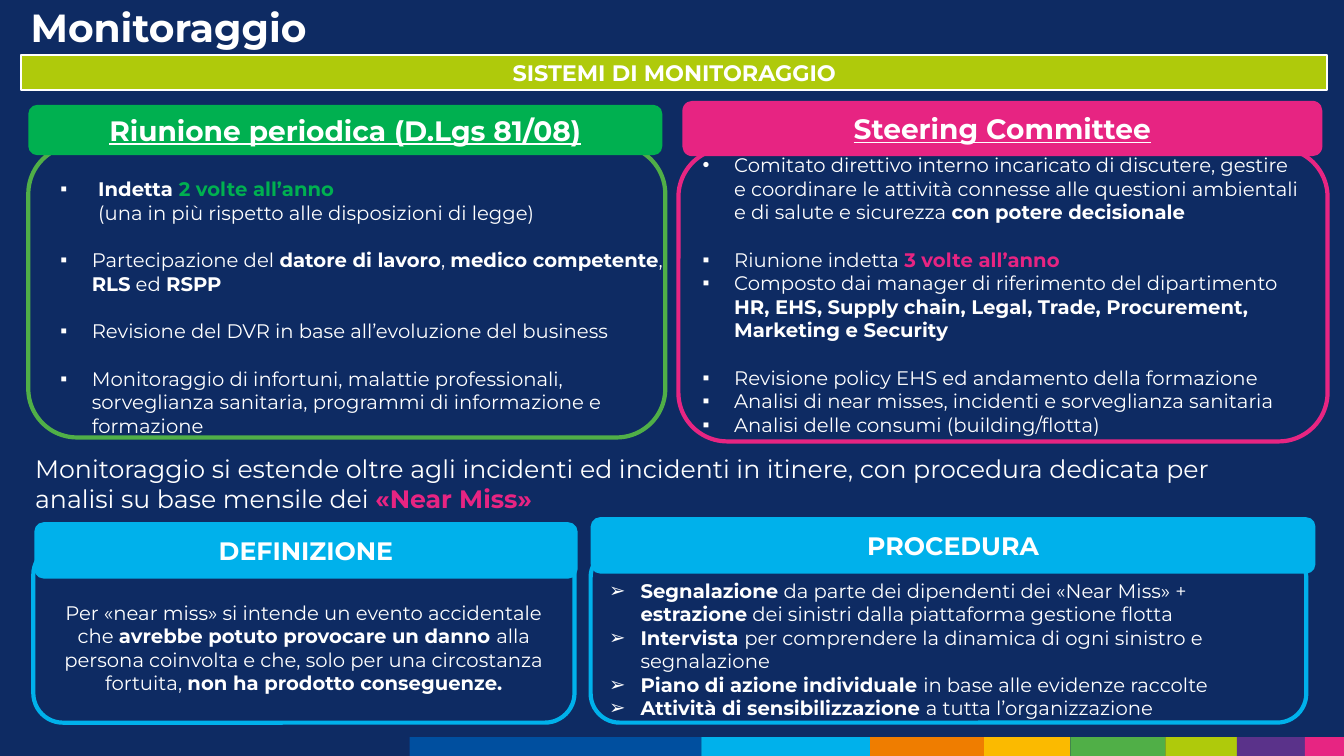
from lxml import etree
from pptx import Presentation
from pptx.dml.color import RGBColor
from pptx.enum.shapes import MSO_SHAPE
from pptx.enum.text import MSO_ANCHOR, PP_ALIGN
from pptx.oxml.ns import qn
from pptx.util import Pt

RECT = MSO_SHAPE.RECTANGLE
ROUNDED = MSO_SHAPE.ROUNDED_RECTANGLE
PROCESS = MSO_SHAPE.FLOWCHART_ALTERNATE_PROCESS
LEFT, CENTER = PP_ALIGN.LEFT, PP_ALIGN.CENTER
TOP, MIDDLE = MSO_ANCHOR.TOP, MSO_ANCHOR.MIDDLE

FONT = "Montserrat"
COLORS = {
    "navy": "0E2B63", "white": "FFFFFF", "lime": "AFCA0B", "green": "00B050",
    "leaf": "50AF47", "pink": "E72482", "magenta": "E72582", "cyan": "00B1EB",
    "blue": "004F9F", "orange": "EF7D00", "yellow": "FBBA00", "purple": "5A328A",
}
LINE_GAP = 17  # one line of body text
INDENT = 22.5

deck = Presentation()
deck.slide_width, deck.slide_height = Pt(960), Pt(540)
page = deck.slides.add_slide(deck.slide_layouts[6])
page.background.fill.solid()
page.background.fill.fore_color.rgb = RGBColor.from_string(COLORS["navy"])


def add_box(kind, place, fill=None, line=None, line_width=3):
    """Add a preset shape, or a text box when kind is None."""
    place = [Pt(value) for value in place]
    if kind is None:
        box = page.shapes.add_textbox(*place)
    else:
        box = page.shapes.add_shape(kind, *place)
        box.shadow.inherit = False
        for part, color in ((box.fill, fill), (box.line.fill, line)):
            if color:
                part.solid()
                part.fore_color.rgb = RGBColor.from_string(COLORS[color])
            else:
                part.background()
        if line:
            box.line.width = Pt(line_width)
    box.text_frame.word_wrap = True
    return box


def write(box, paragraphs, size=14, align=LEFT, anchor=MIDDLE, top=0):
    """Each paragraph is (bullet, indent, space before, spans).

    A span is (text, style): None is plain, "bold" is white, a colour is bold.
    """
    frame = box.text_frame
    frame.vertical_anchor = anchor
    frame.margin_top, frame.margin_bottom = Pt(top), 0
    for index, (bullet, indent, gap, spans) in enumerate(paragraphs):
        para = frame.paragraphs[0] if index == 0 else frame.add_paragraph()
        para.alignment = align
        if gap:
            para.space_before = Pt(gap)
        if bullet:
            props = para._p.get_or_add_pPr()
            props.set("marL", str(Pt(indent)))
            props.set("indent", str(-Pt(indent)))
            etree.SubElement(props, qn("a:buFont")).set("typeface", "Arial")
            etree.SubElement(props, qn("a:buChar")).set("char", bullet)
        para.font.name, para.font.size = FONT, Pt(size)
        for text, style in spans:
            if text == "\n":
                para.add_line_break()
                continue
            span = para.add_run()
            span.text = text
            span.font.bold = style is not None
            color = COLORS.get(style, COLORS["white"])
            span.font.color.rgb = RGBColor.from_string(color)


# Footer stripe: each band runs to the start of the next
edges = [292.5, 501, 621.5, 703, 764.5, 832.5, 883.5, 932, 960]
bands = ["blue", "cyan", "orange", "yellow", "leaf", "lime", "purple", "magenta"]
for start, end, color in zip(edges, edges[1:], bands):
    add_box(RECT, (start, 526.5, end - start, 13.5), color)

# Title
title = add_box(None, (14.4, 6.5, 687.6, 38.9))
title.text_frame.margin_left = Pt(7.5)
write(title, [(None, 0, 0, [("Monitoraggio", "bold")])], 28, anchor=TOP)
title.text_frame.paragraphs[0].line_spacing = 0.9

# Outlined cards
meeting_card = add_box(ROUNDED, (20.2, 103.7, 455, 208.8), line="leaf")
committee_card = add_box(ROUNDED, (484.6, 105.8, 463.7, 209.5), line="magenta")
definition_card = add_box(ROUNDED, (23.8, 389.5, 386.6, 126.7), line="cyan")
procedure_card = add_box(ROUNDED, (421.9, 391.7, 511.2, 124.5), line="cyan")

# Headings over the cards
headings = [
    ("SISTEMI DI MONITORAGGIO", RECT, (15.1, 39.6, 933.1, 24.5), "lime", 16),
    ("Riunione periodica (D.Lgs 81/08)", ROUNDED, (20.2, 74.9, 452.9, 36), "green", 20),
    ("Steering Committee", ROUNDED, (487.4, 72, 457.2, 39.6), "pink", 20),
    ("DEFINIZIONE", PROCESS, (24.5, 373, 388.1, 40.3), "cyan", 18),
    ("PROCEDURA", PROCESS, (421.9, 369.4, 517.7, 40.3), "cyan", 18),
]
for text, kind, place, color, size in headings:
    line = "white" if kind == RECT else None
    heading = add_box(kind, place, color, line, 1.5)
    write(heading, [(None, 0, 0, [(text, "bold")])], size, CENTER)
    if kind == ROUNDED:
        heading.adjustments[0] = 0.18
        heading.text_frame.paragraphs[0].runs[0].font.underline = True

# Periodic meeting
meeting_text = add_box(None, (36, 103.7, 451.4, 212.4))
write(meeting_text, [
    ("▪", 27, 0, [("Indetta ", "bold"), ("2 volte all’anno", "green"), ("\n", None),
                  ("(una in più rispetto alle disposizioni di legge)", None)]),
    ("▪", INDENT, LINE_GAP, [
        ("Partecipazione del ", None), ("datore di lavoro", "bold"), (", ", None),
        ("medico competente", "bold"), (", ", None), ("RLS", "bold"),
        (" ed ", None), ("RSPP", "bold")]),
    ("▪", INDENT, LINE_GAP, [
        ("Revisione del DVR in base all’evoluzione del business", None)]),
    ("▪", INDENT, LINE_GAP, [
        ("Monitoraggio di infortuni, malattie professionali, sorveglianza "
         "sanitaria, programmi di informazione e formazione", None)]),
], anchor=TOP, top=23)

# Steering committee
write(committee_card, [
    ("•", INDENT, 0, [
        ("Comitato direttivo interno incaricato di discutere, gestire e coordinare "
         "le attività connesse alle questioni ambientali e di salute e sicurezza ", None),
        ("con potere decisionale", "bold")]),
    ("▪", INDENT, LINE_GAP, [("Riunione indetta ", None), ("3 volte all’anno", "pink")]),
    ("▪", INDENT, 0, [
        ("Composto dai manager di riferimento del dipartimento ", None),
        ("HR, EHS, Supply chain, Legal, Trade, Procurement, Marketing e Security",
         "bold")]),
    ("▪", INDENT, LINE_GAP, [
        ("Revisione policy EHS ed andamento della formazione", None)]),
    ("▪", INDENT, 0, [
        ("Analisi di near misses, incidenti e sorveglianza sanitaria", None)]),
    ("▪", INDENT, 0, [("Analisi delle consumi (building/flotta)", None)]),
])

# Near miss statement
statement = add_box(None, (18, 320.4, 913, 51.1))
write(statement, [(None, 0, 0, [
    ("Monitoraggio si estende oltre agli incidenti ed incidenti in itinere, con "
     "procedura dedicata per analisi su base mensile dei ", None),
    ("«Near Miss»", "pink")])], 18, anchor=TOP, top=3.6)

# Definition
write(definition_card, [(None, 0, 0, [
    ("Per «near miss» si intende un evento accidentale che ", None),
    ("avrebbe potuto provocare un danno ", "bold"),
    ("alla persona coinvolta e che, solo per una circostanza fortuita, ", None),
    ("non ha prodotto conseguenze.", "bold")])], align=CENTER, top=19.5)

# Procedure
write(procedure_card, [
    ("➢", INDENT, 0, [
        ("Segnalazione", "bold"), (" da parte dei dipendenti dei «Near Miss» + ", None),
        ("estrazione", "bold"),
        (" dei sinistri dalla piattaforma gestione flotta", None)]),
    ("➢", INDENT, 0, [
        ("Intervista ", "bold"),
        ("per comprendere la dinamica di ogni sinistro e segnalazione", None)]),
    ("➢", INDENT, 0, [
        ("Piano di azione individuale ", "bold"),
        ("in base alle evidenze raccolte", None)]),
    ("➢", INDENT, 0, [
        ("Attività di sensibilizzazione ", "bold"),
        ("a tutta l’organizzazione", None)]),
], top=19.5)

deck.save("out.pptx")
